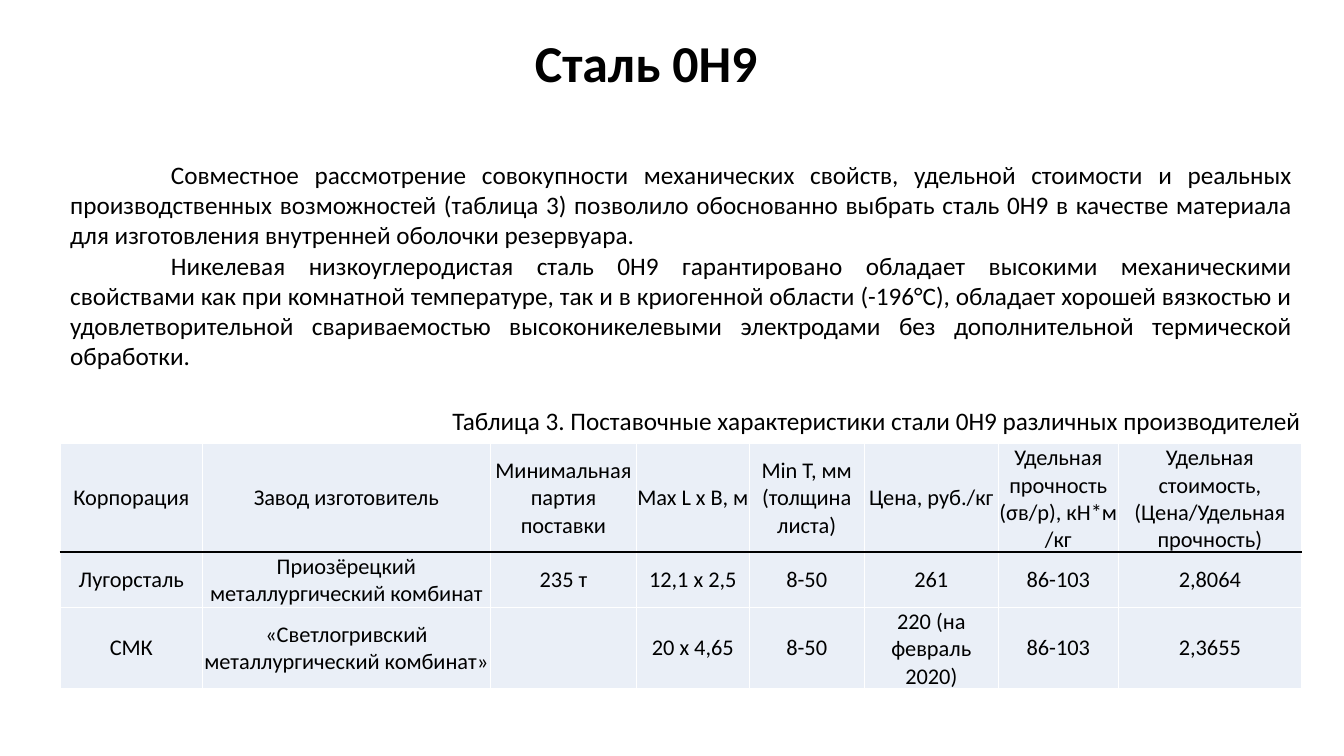
import pptx
import pptx.util
import pptx.dml.color
import pptx.enum.text
import pptx.oxml
import pptx.oxml.ns

Cm = pptx.util.Cm
Pt = pptx.util.Pt
ALIGN = pptx.enum.text.PP_ALIGN
ANCHOR = pptx.enum.text.MSO_ANCHOR

COLORS = {"text": "000000", "cell": "EAEFF7", "grid": "FFFFFF", "rule": "000000"}
FONT = "Calibri"

HEADING = "Сталь 0Н9"
BODY = [
    "Совместное рассмотрение совокупности механических свойств, удельной стоимости и реальных "
    "производственных возможностей (таблица 3) позволило обоснованно выбрать сталь 0Н9 в качестве "
    "материала для изготовления внутренней оболочки резервуара.",
    "Никелевая низкоуглеродистая сталь 0Н9 гарантировано обладает высокими механическими свойствами "
    "как при комнатной температуре, так и в криогенной области (-196°С), обладает хорошей вязкостью и "
    "удовлетворительной свариваемостью высоконикелевыми электродами без дополнительной термической "
    "обработки.",
]
CAPTION = "Таблица 3. Поставочные характеристики стали 0Н9 различных производителей"
SUPPLIERS = [
    ["Корпорация", "Завод изготовитель", "Минимальная партия поставки", "Max L x B, м",
     "Min T, мм (толщина листа)", "Цена, руб./кг", "Удельная прочность (σв/р), кН*м /кг",
     "Удельная стоимость, (Цена/Удельная прочность)"],
    ["Лугорсталь", "Приозёрецкий металлургический комбинат", "235 т", "12,1 x 2,5", "8-50",
     "261", "86-103", "2,8064"],
    ["СМК", "«Светлогривский металлургический комбинат»", "", "20 x 4,65", "8-50",
     "220 (на февраль 2020)", "86-103", "2,3655"],
]
COLUMN_WIDTHS = [3.58, 7.26, 3.68, 2.84, 2.9, 3.38, 3.02, 4.62]
ROW_HEIGHTS = [2.7, 1.39, 2.03]
LEFT, WIDTH = 1.52, 31.29


def rgb(name):
    return pptx.dml.color.RGBColor.from_string(COLORS[name])


def style(paragraph, size, align, bold=False):
    paragraph.alignment = align
    paragraph.font.name = FONT
    paragraph.font.size = Pt(size)
    paragraph.font.bold = bold
    paragraph.font.color.rgb = rgb("text")


def add_text(slide, box, lines, size, align=ALIGN.LEFT, bold=False, wrap=False, indent=0):
    frame = slide.shapes.add_textbox(*(Cm(length) for length in box)).text_frame
    frame.word_wrap = wrap
    frame.text = "\n".join(lines)
    for paragraph in frame.paragraphs:
        style(paragraph, size, align, bold)
        if indent:
            paragraph._p.get_or_add_pPr().set("indent", str(Cm(indent)))


def add_borders(cell, sides):
    properties = cell._tc.get_or_add_tcPr()
    for position, (side, color) in enumerate(sides.items()):
        properties.insert(position, pptx.oxml.parse_xml(
            f'<a:{side} {pptx.oxml.ns.nsdecls("a")} w="{Pt(1)}"><a:solidFill>'
            f'<a:srgbClr val="{COLORS[color]}"/></a:solidFill></a:{side}>'))


def add_suppliers(slide):
    table = slide.shapes.add_table(
        len(SUPPLIERS), len(COLUMN_WIDTHS), Cm(LEFT), Cm(11.18), Cm(WIDTH), Cm(sum(ROW_HEIGHTS))).table
    for column, width in zip(table.columns, COLUMN_WIDTHS):
        column.width = Cm(width)
    for r, (row, height) in enumerate(zip(SUPPLIERS, ROW_HEIGHTS)):
        table.rows[r].height = Cm(height)
        for c, value in enumerate(row):
            cell = table.cell(r, c)
            cell.text = value
            cell.margin_left = cell.margin_right = cell.margin_top = Cm(0.02)
            cell.margin_bottom = 0
            cell.vertical_anchor = ANCHOR.BOTTOM if (r, c) == (1, 1) else ANCHOR.MIDDLE
            style(cell.text_frame.paragraphs[0], 16, ALIGN.CENTER)
            cell.fill.solid()
            cell.fill.fore_color.rgb = rgb("cell")
            add_borders(cell, {
                "lnL": "grid", "lnR": "grid",
                "lnT": "rule" if r == 1 else "grid",
                "lnB": "rule" if r == 0 else "grid"})


def main():
    deck = pptx.Presentation()
    deck.slide_width, deck.slide_height = Cm(33.87), Cm(19.05)
    slide = deck.slides.add_slide(deck.slide_layouts[6])
    add_text(slide, (13.23, 0.64, 6.2, 1.83), [HEADING], 37, bold=True)
    add_text(slide, (LEFT, 3.89, WIDTH, 5.64), BODY, 18, ALIGN.JUSTIFY, wrap=True, indent=2.54)
    add_suppliers(slide)
    add_text(slide, (11.15, 10.08, 22.15, 1.02), [CAPTION], 18)
    deck.save("out.pptx")


if __name__ == "__main__":
    main()
